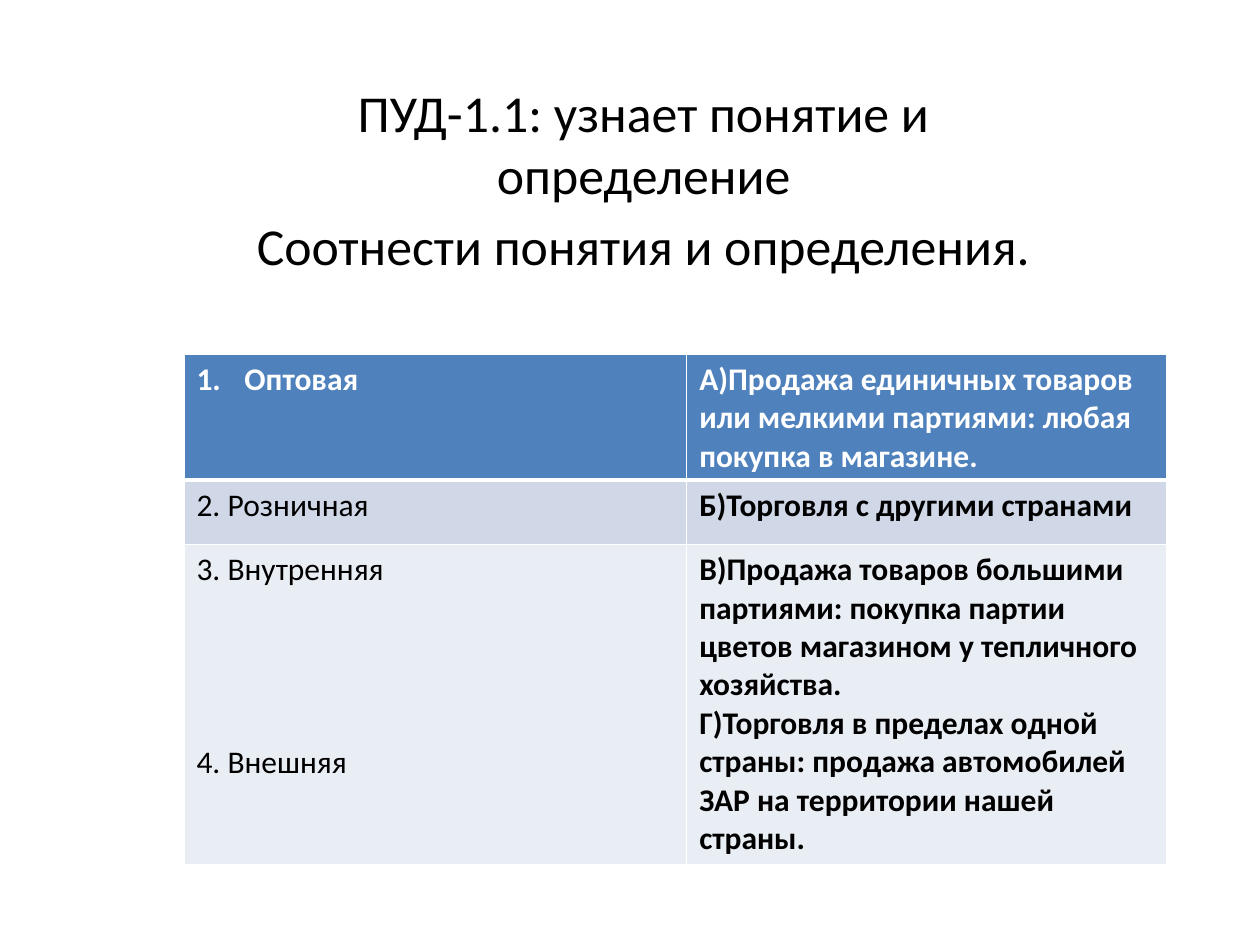
from lxml import etree
from pptx import Presentation
from pptx.dml.color import RGBColor
from pptx.enum.text import PP_ALIGN
from pptx.oxml.ns import qn
from pptx.util import Inches, Pt

CENTER = PP_ALIGN.CENTER
FONT = "Calibri"
WHITE, BLACK = "FFFFFF", "000000"

HEADING = ["ПУД-1.1: узнает понятие и определение", "Соотнести понятия и определения."]
COLUMN_WIDTHS = [3.99, 3.81]
ROWS = [
    {"height": 1.0, "fill": "4F81BD", "color": WHITE, "terms": ["Оптовая"], "numbered": True,
     "definitions": ["А)Продажа единичных товаров или мелкими партиями: любая покупка в магазине."]},
    {"height": 0.51, "fill": "D0D8E8", "color": BLACK, "terms": ["2. Розничная"],
     "definitions": ["Б)Торговля с другими странами"]},
    {"height": 2.54, "fill": "E9EDF4", "color": BLACK, "terms": ["3. Внутренняя", "4. Внешняя"],
     "term_gap": 88,
     "definitions": [
         "В)Продажа товаров большими партиями: покупка партии цветов магазином у тепличного хозяйства.",
         "Г)Торговля в пределах одной страны: продажа автомобилей ЗАР на территории нашей страны."]},
]


def rgb(value):
    return RGBColor.from_string(value)


def write(frame, lines, size, color, bold=False, gap=0, align=None):
    frame.word_wrap = True
    for index, line in enumerate(lines):
        paragraph = frame.add_paragraph() if index else frame.paragraphs[0]
        paragraph.alignment = align
        paragraph.space_before = Pt(gap if index else 0)
        run = paragraph.add_run()
        run.text = line
        run.font.name = FONT
        run.font.size = Pt(size)
        run.font.bold = bold
        run.font.color.rgb = rgb(color)


def number(paragraph):
    properties = paragraph._p.get_or_add_pPr()
    properties.set("marL", str(Inches(0.38)))
    properties.set("indent", str(-Inches(0.38)))
    etree.SubElement(properties, qn("a:buAutoNum"), type="arabicPeriod")


def paint(cell, fill, bottom_width, top_width):
    cell.fill.solid()
    cell.fill.fore_color.rgb = rgb(fill)
    properties = cell._tc.get_or_add_tcPr()
    widths = {"a:lnL": 1, "a:lnR": 1, "a:lnT": top_width, "a:lnB": bottom_width}
    for position, (tag, width) in enumerate(widths.items()):
        line = etree.Element(qn(tag), w=str(Pt(width)))
        solid = etree.SubElement(line, qn("a:solidFill"))
        etree.SubElement(solid, qn("a:srgbClr"), val=WHITE)
        properties.insert(position, line)


def add_heading(slide):
    box = slide.shapes.add_textbox(Inches(1.61), Inches(0.59), Inches(7), Inches(1.7))
    write(box.text_frame, HEADING, 29.6, BLACK, gap=5, align=CENTER)


def add_matching_table(slide):
    height = sum(row["height"] for row in ROWS)
    table = slide.shapes.add_table(len(ROWS), len(COLUMN_WIDTHS), Inches(1.46), Inches(2.81),
                                   Inches(sum(COLUMN_WIDTHS)), Inches(height)).table
    for column, width in zip(table.columns, COLUMN_WIDTHS):
        column.width = Inches(width)
    for index, row in enumerate(ROWS):
        table.rows[index].height = Inches(row["height"])
        term, definition = table.rows[index].cells
        numbered = row.get("numbered", False)
        write(term.text_frame, row["terms"], 18, row["color"], numbered, row.get("term_gap", 0))
        write(definition.text_frame, row["definitions"], 18, row["color"], True)
        if numbered:
            number(term.text_frame.paragraphs[0])
        for cell in (term, definition):
            paint(cell, row["fill"], 3 if index == 0 else 1, 3 if index == 1 else 1)


def main():
    """Build the slide that matches trade terms with definitions."""
    presentation = Presentation()
    presentation.slide_width = Inches(10)
    presentation.slide_height = Inches(7.5)
    slide = presentation.slides.add_slide(presentation.slide_layouts[6])
    add_heading(slide)
    add_matching_table(slide)
    presentation.save("out.pptx")


if __name__ == "__main__":
    main()
